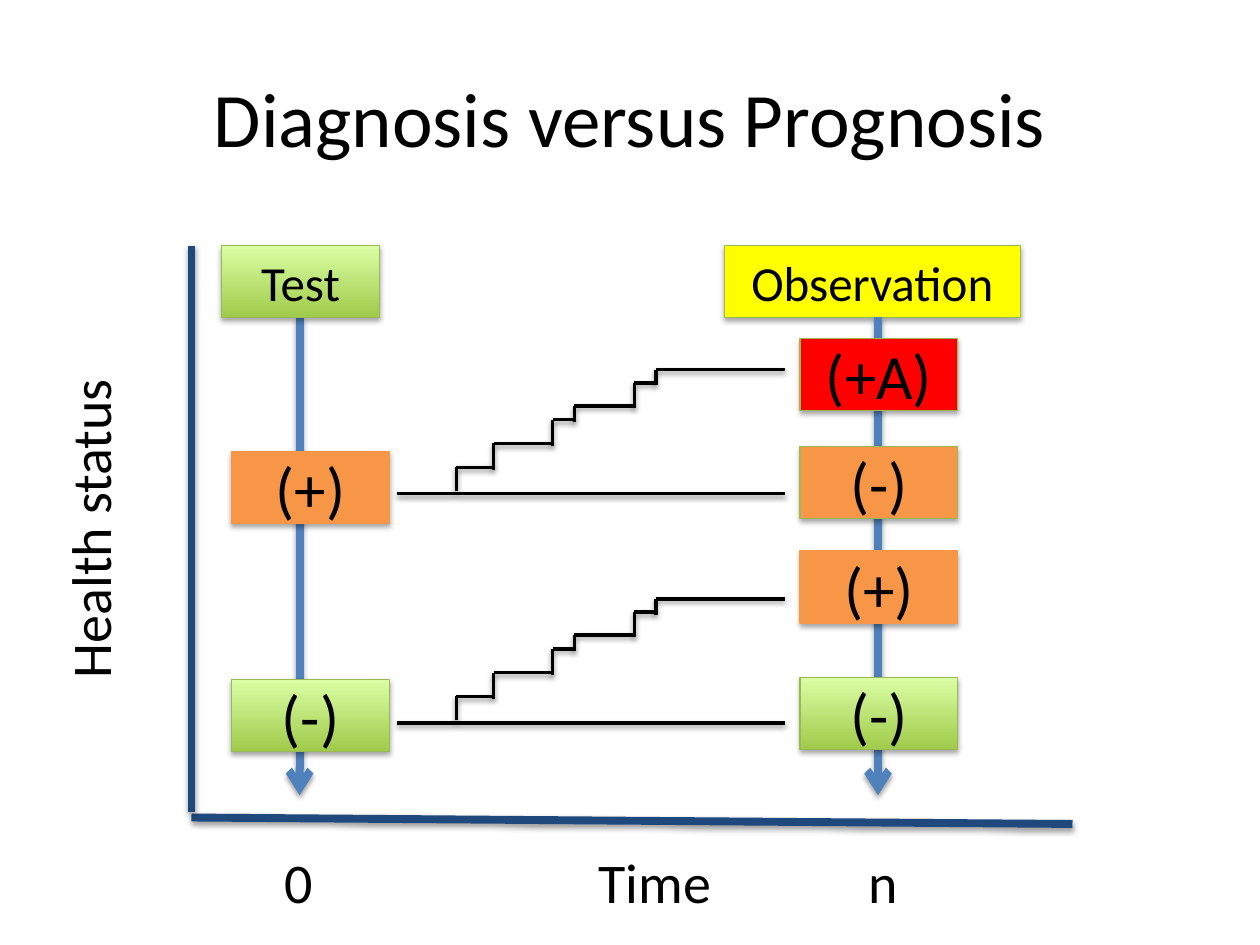
from lxml.etree import SubElement
from pptx import Presentation
from pptx.dml.color import RGBColor
from pptx.enum.shapes import MSO_CONNECTOR, MSO_SHAPE
from pptx.enum.text import MSO_ANCHOR, MSO_AUTO_SIZE, PP_ALIGN
from pptx.oxml.ns import qn
from pptx.util import Cm, Pt

COLORS = {
    "text": "000000",
    "axis": "1F497D",
    "arrow": "4F81BD",
    "step": "000000",
    "shadow": "000000",
    "green_dark": "A0CA4A",
    "green_light": "DAFFA5",
    "green_edge": "98B955",
    "orange": "F79646",
    "yellow": "FFFF00",
    "red": "FF0000",
}
FONT = "Calibri"
BOX_WIDTH, BOX_HEIGHT = 3.18, 1.45
TOP = 4.95
TEST_X, OBSERVATION_X = 6.04, 17.7
TEST_LEFT, OBSERVATION_LEFT = 4.67, 16.13
BASELINE_START, BASELINE_END = 8.0, 15.83
STEP_XS = [9.2, 9.95, 11.14, 11.58, 12.79, 13.22, BASELINE_END]
STEP_RISES = [0, 0.53, 1.01, 1.49, 1.77, 2.23, 2.5]
STEP_OVERLAP = 0.05


def color(name):
    return RGBColor.from_string(COLORS[name])


def write_text(shape, text, size=32, align=PP_ALIGN.LEFT, anchor=MSO_ANCHOR.TOP, wrap=True):
    frame = shape.text_frame
    frame.word_wrap = wrap
    frame.vertical_anchor = anchor
    paragraph = frame.paragraphs[0]
    paragraph.text = text
    paragraph.alignment = align
    paragraph.font.name = FONT
    paragraph.font.size = Pt(size)
    paragraph.font.color.rgb = color("text")


def add_shadow(properties, distance, opacity):
    effects = SubElement(properties, qn("a:effectLst"))
    shadow = SubElement(effects, qn("a:outerShdw"), blurRad=str(Pt(3.1)),
                        dist=str(Pt(distance)), dir="5400000", rotWithShape="0")
    shade = SubElement(shadow, qn("a:srgbClr"), val=COLORS["shadow"])
    SubElement(shade, qn("a:alpha"), val=str(opacity * 1000))


def add_line(slide, start, end, line_color="step", width=2, arrow=False):
    connector = slide.shapes.add_connector(
        MSO_CONNECTOR.STRAIGHT, *(Cm(value) for value in (*start, *end)))
    connector.line.color.rgb = color(line_color)
    connector.line.width = Pt(width)
    properties = connector._element.spPr
    if arrow:
        SubElement(properties.find(qn("a:ln")), qn("a:tailEnd"), type="arrow")
    add_shadow(properties, 1.6, 38)


def add_box(slide, text, left, top, fill="green", edge="green_edge", width=BOX_WIDTH, size=36):
    shape = slide.shapes.add_shape(
        MSO_SHAPE.RECTANGLE, Cm(left), Cm(top), Cm(width), Cm(BOX_HEIGHT))
    if fill == "green":
        shape.fill.gradient()
        shape.fill.gradient_angle = 90
        for stop, name in zip(shape.fill.gradient_stops, ("green_dark", "green_light")):
            stop.color.rgb = color(name)
    else:
        shape.fill.solid()
        shape.fill.fore_color.rgb = color(fill)
    shape.line.color.rgb = color(edge)
    shape.line.width = Pt(0.75)
    add_shadow(shape._element.spPr, 1.8, 35)
    write_text(shape, text, size, PP_ALIGN.CENTER, MSO_ANCHOR.MIDDLE)


def add_label(slide, text, left, top, width, rotation=0):
    label = slide.shapes.add_textbox(Cm(left), Cm(top), Cm(width), Cm(1.62))
    label.rotation = rotation
    write_text(label, text, wrap=False)
    label.text_frame.auto_size = MSO_AUTO_SIZE.SHAPE_TO_FIT_TEXT


def add_title(slide, text):
    title = slide.shapes.add_textbox(Cm(1.27), Cm(0.76), Cm(22.86), Cm(3.18))
    write_text(title, text, 44, PP_ALIGN.CENTER, MSO_ANCHOR.MIDDLE)


def add_time_arrow(slide, x):
    add_line(slide, (x, TOP + BOX_HEIGHT), (x, 16.03), "arrow", 4.5, arrow=True)


def add_staircase(slide, baseline):
    add_line(slide, (BASELINE_START, baseline), (BASELINE_END, baseline))
    levels = [baseline - rise for rise in STEP_RISES]
    for index, x in enumerate(STEP_XS[:-1]):
        lower, upper = levels[index:index + 2]
        foot = lower + STEP_OVERLAP if index else lower - STEP_OVERLAP
        add_line(slide, (x, foot), (x, upper))
        add_line(slide, (x, upper), (STEP_XS[index + 1], upper))


def main():
    presentation = Presentation()
    presentation.slide_width, presentation.slide_height = Cm(25.4), Cm(19.05)
    slide = presentation.slides.add_slide(presentation.slide_layouts[6])

    add_title(slide, "Diagnosis versus Prognosis")
    add_line(slide, (3.86, 16.48), (21.62, 16.61), "axis", 4.5)
    add_line(slide, (3.86, 16.36), (3.86, TOP), "axis", 4.5)
    add_label(slide, "Health status", -1.52, 9.8, 6.63, rotation=270)
    for text, left, width in (("0", 5.49, 1.09), ("Time", 11.81, 2.82), ("n", 17.25, 1.12)):
        add_label(slide, text, left, 16.97, width)

    add_time_arrow(slide, TEST_X)
    add_box(slide, "Test", 4.47, TOP, size=28)
    add_box(slide, "(+)", TEST_LEFT, 9.1, "orange", "orange")
    add_box(slide, "(-)", TEST_LEFT, 13.7)

    add_box(slide, "Observation", 14.6, TOP, "yellow", width=5.97, size=28)
    add_time_arrow(slide, OBSERVATION_X)
    add_box(slide, "(+A)", OBSERVATION_LEFT, 6.82, "red")
    add_box(slide, "(-)", OBSERVATION_LEFT, 9.0, "orange")
    add_box(slide, "(+)", OBSERVATION_LEFT, 11.11, "orange", "orange")
    add_box(slide, "(-)", OBSERVATION_LEFT, 13.66)

    for baseline in (9.95, 14.57):
        add_staircase(slide, baseline)

    presentation.save("out.pptx")


if __name__ == "__main__":
    main()
